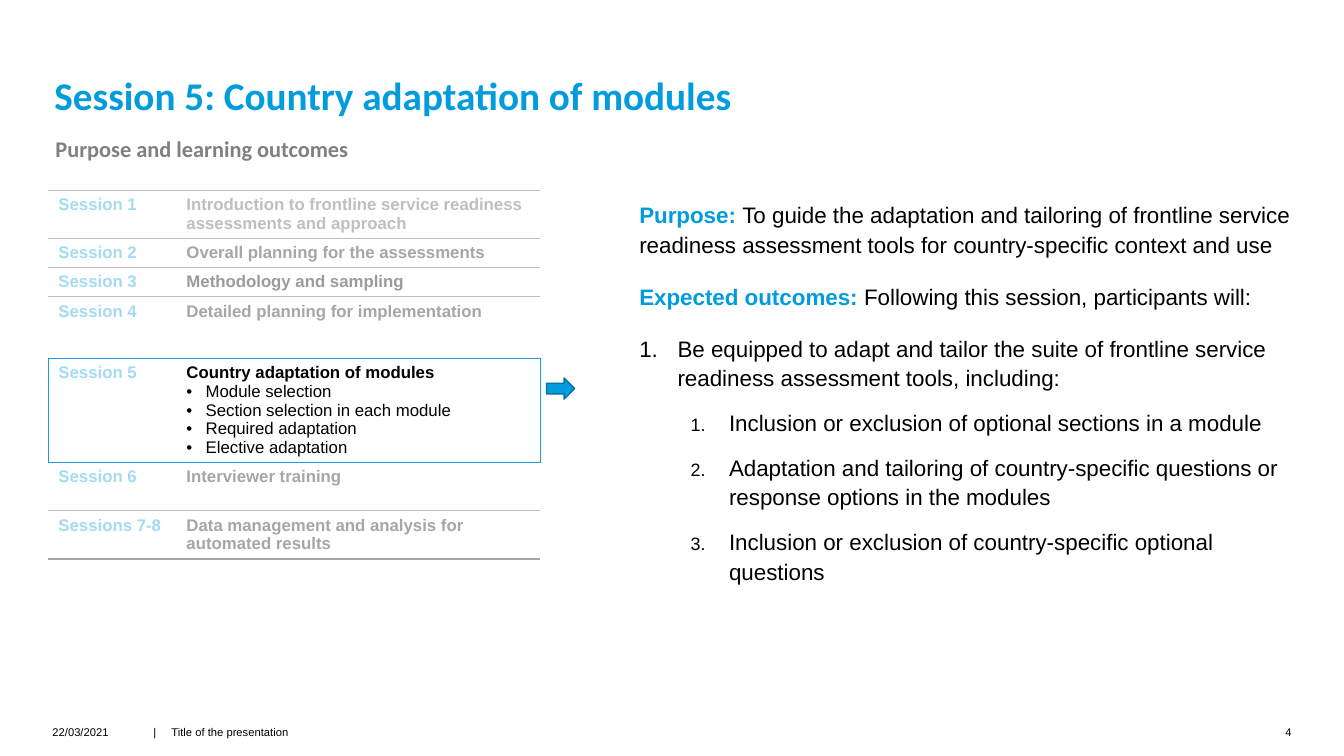
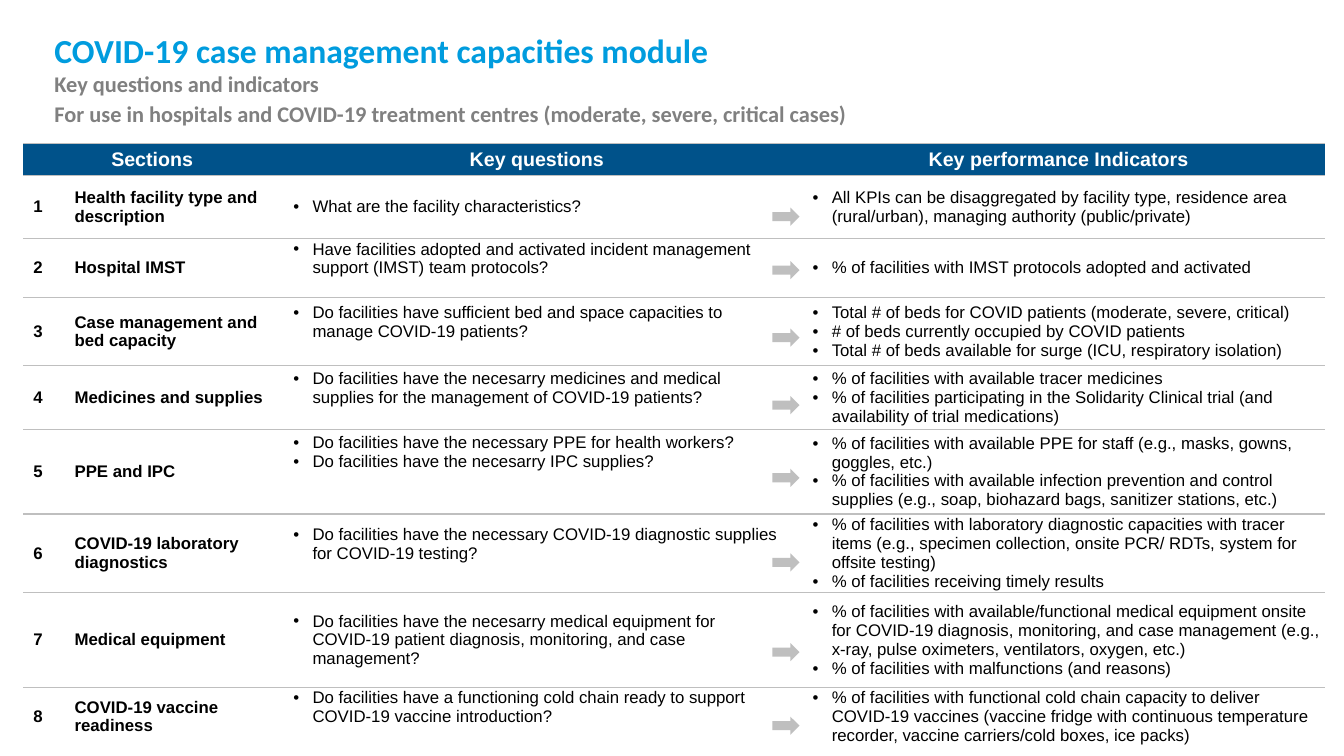
from lxml import etree
from pptx import Presentation
from pptx.dml.color import RGBColor
from pptx.enum.shapes import MSO_SHAPE
from pptx.enum.text import MSO_ANCHOR, MSO_AUTO_SIZE, PP_ALIGN
from pptx.oxml.ns import qn
from pptx.util import Inches, Pt

TOP, MIDDLE, BOTTOM = MSO_ANCHOR.TOP, MSO_ANCHOR.MIDDLE, MSO_ANCHOR.BOTTOM
LEFT, CENTER, RIGHT = PP_ALIGN.LEFT, PP_ALIGN.CENTER, PP_ALIGN.RIGHT
ARROW = MSO_SHAPE.RIGHT_ARROW
BLUE, NAVY, PALE_BLUE, FRAME = "009CDE", "00528A", "A4DBF3", "1A9DD1"
BLACK, WHITE, GREY, MUTED, SUBTITLE = "000000", "FFFFFF", "BFBFBF", "A6A6A6", "808080"
TITLE_FONT = {"name": "Calibri", "bold": True, "color": BLUE}
SUBTITLE_FONT = {"name": "Calibri", "size": 16, "bold": True, "color": SUBTITLE}
CELL = {"name": "Arial", "size": 12, "bold": False, "color": BLACK}
CELL_BOLD = {**CELL, "bold": True}
HEADER = {**CELL_BOLD, "size": 14, "color": WHITE}
OUTCOME = {**CELL, "size": 16}
LEAD = {**OUTCOME, "bold": True, "color": BLUE}
FOOTER = {**CELL, "size": 8}
LINE = 0.19

SESSIONS = [
    ("Session 1", "Introduction to frontline service readiness assessments and approach", GREY, 0.47),
    ("Session 2", "Overall planning for the assessments", MUTED, 0.29),
    ("Session 3", "Methodology and sampling", "9B9B9B", 0.29),
    ("Session 4", "Detailed planning for implementation", MUTED, 0.61),
    ("Session 5", "Country adaptation of modules", BLACK, 1.03),
    ("Session 6", "Interviewer training", MUTED, 0.48),
    ("Sessions 7-8", "Data management and analysis for automated results", MUTED, 0.48),
]
CURRENT = 4
CURRENT_TOPICS = ["Module selection", "Section selection in each module",
                  "Required adaptation", "Elective adaptation"]
SUB_OUTCOMES = [
    "Inclusion or exclusion of optional sections in a module",
    "Adaptation and tailoring of country-specific questions or response options in the modules",
    "Inclusion or exclusion of country-specific optional questions",
]
# Each section: name, questions, indicators, row height, arrow top, lines left free below the questions
SECTIONS = [
    ("Health facility type and description",
     ["What are the facility characteristics?"],
     ["All KPIs can be disaggregated by facility type, residence area (rural/urban), "
      "managing authority (public/private)"], 0.63, 2.06, 0),
    ("Hospital IMST",
     ["Have facilities adopted and activated incident management support (IMST) team protocols?"],
     ["% of facilities with IMST protocols adopted and activated"], 0.58, 2.59, 1),
    ("Case management and bed capacity",
     ["Do facilities have sufficient bed and space capacities to manage COVID-19 patients?"],
     ["Total # of beds for COVID patients (moderate, severe, critical)",
      "# of beds currently occupied by COVID patients",
      "Total # of beds available for surge (ICU, respiratory isolation)"], 0.68, 3.26, 1),
    ("Medicines and supplies",
     ["Do facilities have the necesarry medicines and medical supplies for the management "
      "of COVID-19 patients?"],
     ["% of facilities with available tracer medicines",
      "% of facilities participating in the Solidarity Clinical trial (and availability of "
      "trial medications)"], 0.63, 3.93, 1),
    ("PPE and IPC",
     ["Do facilities have the necessary PPE for health workers?",
      "Do facilities have the necesarry IPC supplies?"],
     ["% of facilities with available PPE for staff (e.g., masks, gowns, goggles, etc.)",
      "% of facilities with available infection prevention and control supplies (e.g., soap, "
      "biohazard bags, sanitizer stations, etc.)"], 0.84, 4.65, 2),
    ("COVID-19 laboratory diagnostics",
     ["Do facilities have the necessary COVID-19 diagnostic supplies for COVID-19 testing?"],
     ["% of facilities with laboratory diagnostic capacities with tracer items (e.g., specimen "
      "collection, onsite PCR/ RDTs, system for offsite testing)",
      "% of facilities receiving timely results"], 0.78, 5.49, 1),
    ("Medical equipment",
     ["Do facilities have the necesarry medical equipment for COVID-19 patient diagnosis, "
      "monitoring, and case management?"],
     ["% of facilities with available/functional medical equipment onsite for COVID-19 "
      "diagnosis, monitoring, and case management (e.g., x-ray, pulse oximeters, ventilators, "
      "oxygen, etc.)",
      "% of facilities with malfunctions (and reasons)"], 0.94, 6.38, 0),
    ("COVID-19 vaccine readiness",
     ["Do facilities have a functioning cold chain ready to support COVID-19 vaccine introduction?"],
     ["% of facilities with functional cold chain capacity to deliver COVID-19 vaccines (vaccine "
      "fridge with continuous temperature recorder, vaccine carriers/cold boxes, ice packs)"],
     0.58, 7.11, 1),
]


def rgb(value):
    """Turn a hex string into a colour."""
    return RGBColor.from_string(value)


def add_run(p, text, font):
    """Add a run formatted from a dict of font values."""
    r = p.add_run()
    r.text = text
    for key, value in font.items():
        if key == "color":
            r.font.color.rgb = rgb(value)
        else:
            setattr(r.font, key, Pt(value) if key == "size" else value)


def add_paragraph(tf, runs, **fmt):
    """Add a paragraph of (text, font) runs, reusing the empty first one."""
    first = tf.paragraphs[0]
    p = tf.add_paragraph() if first.runs else first
    for key, value in fmt.items():
        setattr(p, key, value)
    for text, font in runs:
        add_run(p, text, font)
    return p


def add_marker(p, left, hang, number=False, percent=100):
    """Give a paragraph a hanging bullet or number."""
    pPr = p._p.get_or_add_pPr()
    pPr.set("marL", str(Inches(left)))
    pPr.set("indent", str(-Inches(hang)))
    clr = etree.SubElement(pPr, qn("a:buClr"))
    etree.SubElement(clr, qn("a:srgbClr"), val=BLACK)
    etree.SubElement(pPr, qn("a:buSzPct"), val=str(percent * 1000))
    etree.SubElement(pPr, qn("a:buFont"), typeface="Arial")
    if number:
        etree.SubElement(pPr, qn("a:buAutoNum"), type="arabicPeriod")
    else:
        etree.SubElement(pPr, qn("a:buChar"), char="•")


def add_bullets(tf, items, left):
    """Add bulleted paragraphs in the table cell font."""
    for item in items:
        add_marker(add_paragraph(tf, [(item, CELL)]), left, 0.19)


def set_frame(tf, anchor, left=0.0, right=0.0):
    """Set wrapping, anchor and insets of a text frame."""
    values = {"word_wrap": True, "auto_size": MSO_AUTO_SIZE.NONE, "vertical_anchor": anchor,
              "margin_left": Inches(left), "margin_right": Inches(right),
              "margin_top": 0, "margin_bottom": 0}
    for key, value in values.items():
        setattr(tf, key, value)


def add_text(s, box, anchor=TOP, inset=0.0):
    """Add a text box and return its text frame."""
    tf = s.shapes.add_textbox(*map(Inches, box)).text_frame
    set_frame(tf, anchor, inset, inset)
    return tf


def add_heading(s, title, size, title_box, subtitle, subtitle_box):
    """Place the title placeholder and the grey subtitle."""
    sp = s.shapes.title
    sp.left, sp.top, sp.width, sp.height = map(Inches, title_box)
    set_frame(sp.text_frame, BOTTOM, 0.02, 0.39)
    add_paragraph(sp.text_frame, [(title, {**TITLE_FONT, "size": size})],
                  alignment=LEFT, line_spacing=0.9)
    p = add_paragraph(add_text(s, subtitle_box, MIDDLE, 0.02), [], line_spacing=1.1)
    for i, line in enumerate(subtitle):
        if i:
            p.add_line_break()
        add_run(p, line, SUBTITLE_FONT)


def add_footer(s, date, label, number):
    """Add the date, presentation title and slide number."""
    add_paragraph(add_text(s, (0.52, 7.2, 0.86, 0.2)), [(date, FOOTER)])
    p = add_paragraph(add_text(s, (1.52, 7.2, 3.25, 0.2)), [("|\t" + label, FOOTER)])
    tabs = etree.SubElement(p._p.get_or_add_pPr(), qn("a:tabLst"))
    etree.SubElement(tabs, qn("a:tab"), pos=str(Inches(0.18)), algn="l")
    add_paragraph(add_text(s, (12.49, 7.2, 0.32, 0.2)), [(number, FOOTER)], alignment=RIGHT)


def add_arrow(s, box, fill, line=None):
    """Add a right-pointing block arrow."""
    sp = s.shapes.add_shape(ARROW, *map(Inches, box))
    sp.shadow.inherit = False
    sp.fill.solid()
    sp.fill.fore_color.rgb = rgb(fill)
    if line:
        sp.line.color.rgb = rgb(line)
        sp.line.width = Pt(1)
    else:
        sp.line.fill.background()


def set_borders(cell, left, right, top, bottom):
    """Draw the four cell borders, leaving out those without a colour."""
    tcPr = cell._tc.get_or_add_tcPr()
    for side, color in zip("LRTB", (left, right, top, bottom)):
        ln = etree.SubElement(tcPr, qn("a:ln" + side), w=str(Pt(1)))
        if color:
            fill = etree.SubElement(ln, qn("a:solidFill"))
            etree.SubElement(fill, qn("a:srgbClr"), val=color)
        else:
            etree.SubElement(ln, qn("a:noFill"))


def add_grid(s, left, top, cols, rows, edges, framed=None):
    """Add a table ruled by one edge colour above and below each row."""
    table = s.shapes.add_table(len(rows), len(cols), Inches(left), Inches(top),
                               Inches(sum(cols)), Inches(sum(rows))).table
    table.first_row = table.horz_banding = False
    for col, width in zip(table.columns, cols):
        col.width = Inches(width)
    for i, height in enumerate(rows):
        table.rows[i].height = Inches(height)
        for j in range(len(cols)):
            cell = table.cell(i, j)
            side = FRAME if i == framed else None
            set_borders(cell, side if j == 0 else None,
                        side if j == len(cols) - 1 else None, edges[i], edges[i + 1])
            cell.fill.background()
    return table


def set_cell(cell, left, top=0.0, bottom=0.0, right=0.0):
    """Centre a cell vertically and set its insets."""
    cell.vertical_anchor = MIDDLE
    cell.margin_left, cell.margin_right = Inches(left), Inches(right)
    cell.margin_top, cell.margin_bottom = Inches(top), Inches(bottom)


def add_sessions(s):
    """Add the session list with the current session framed."""
    edges = [GREY] * CURRENT + [FRAME] * 2 + [GREY, MUTED]
    table = add_grid(s, 0.48, 1.89, [1.27, 3.61], [row[3] for row in SESSIONS], edges, CURRENT)
    for i, (session, topic, color, _) in enumerate(SESSIONS):
        add_paragraph(table.cell(i, 0).text_frame, [(session, {**CELL_BOLD, "color": PALE_BLUE})])
        add_paragraph(table.cell(i, 1).text_frame, [(topic, {**CELL_BOLD, "color": color})])
    add_bullets(table.cell(CURRENT, 1).text_frame, CURRENT_TOPICS, 0.19)


def add_outcomes(s):
    """Add the purpose and the numbered outcomes."""
    tf = add_text(s, (6.32, 1.97, 6.71, 4.22), inset=0.02)
    spacing = {"line_spacing": 1.1, "space_after": Pt(6)}
    add_paragraph(tf, [("Purpose: ", LEAD), (
        "To guide the adaptation and tailoring of frontline service readiness assessment tools "
        "for country-specific context and use", OUTCOME)], **spacing)
    add_paragraph(tf, [("Expected outcomes: ", LEAD),
                       ("Following this session, participants will:", OUTCOME)],
                  space_before=Pt(10), **spacing)
    p = add_paragraph(tf, [("Be equipped to adapt and tailor the suite of frontline service "
                            "readiness assessment tools, including:", OUTCOME)],
                      space_before=Pt(10), **spacing)
    add_marker(p, 0.38, 0.38, number=True)
    for text in SUB_OUTCOMES:
        p = add_paragraph(tf, [(text, OUTCOME)], level=1, space_before=Pt(5), **spacing)
        add_marker(p, 0.89, 0.38, number=True, percent=80)


def add_indicators(s):
    """Add the table of sections, questions and indicators with its arrows."""
    heights = [0.32] + [row[3] for row in SECTIONS]
    table = add_grid(s, 0.23, 1.42, [0.41, 2.15, 4.95, 5.4], heights,
                     [GREY] * len(heights) + [WHITE])
    table.cell(0, 0).merge(table.cell(0, 1))
    for j, text in ((0, "Sections"), (2, "Key questions"), (3, "Key performance Indicators")):
        cell = table.cell(0, j)
        set_cell(cell, 0.12 if j else 0.1, right=0 if j else 0.1)
        cell.fill.solid()
        cell.fill.fore_color.rgb = rgb(NAVY)
        add_paragraph(cell.text_frame, [(text, HEADER)], alignment=CENTER)
    for i, (name, questions, indicators, _, arrow_top, free) in enumerate(SECTIONS, 1):
        for j, text in enumerate((str(i), name)):
            set_cell(table.cell(i, j), 0.1, 0.05, 0.05, 0.1)
            add_paragraph(table.cell(i, j).text_frame, [(text, CELL_BOLD)])
        set_cell(table.cell(i, 2), 0.12, bottom=free * LINE)
        add_bullets(table.cell(i, 2).text_frame, questions, 0.19)
        set_cell(table.cell(i, 3), 0.12)
        add_bullets(table.cell(i, 3).text_frame, indicators, 0.39)
        add_arrow(s, (7.66, arrow_top, 0.27, 0.18), GREY)


def main():
    """Build both slides and save them."""
    prs = Presentation()
    prs.slide_width, prs.slide_height = Inches(13.33), Inches(7.5)
    layout = prs.slide_layouts[5]

    s = prs.slides.add_slide(layout)
    add_heading(s, "Session 5: Country adaptation of modules", 28, (0.52, 0.39, 8.92, 0.79),
                ["Purpose and learning outcomes"], (0.53, 1.3, 8.92, 0.32))
    add_sessions(s)
    add_arrow(s, (5.42, 3.75, 0.28, 0.21), BLUE, "0073A4")
    add_outcomes(s)
    add_footer(s, "22/03/2021", "Title of the presentation", "4")

    s = prs.slides.add_slide(layout)
    add_heading(s, "COVID-19 case management capacities module", 24, (0.52, 0.37, 9.37, 0.33),
                ["Key questions and indicators",
                 "For use in hospitals and COVID-19 treatment centres (moderate, severe, critical cases)"],
                (0.52, 0.71, 9.19, 0.51))
    add_indicators(s)
    prs.save("out.pptx")


if __name__ == "__main__":
    main()
